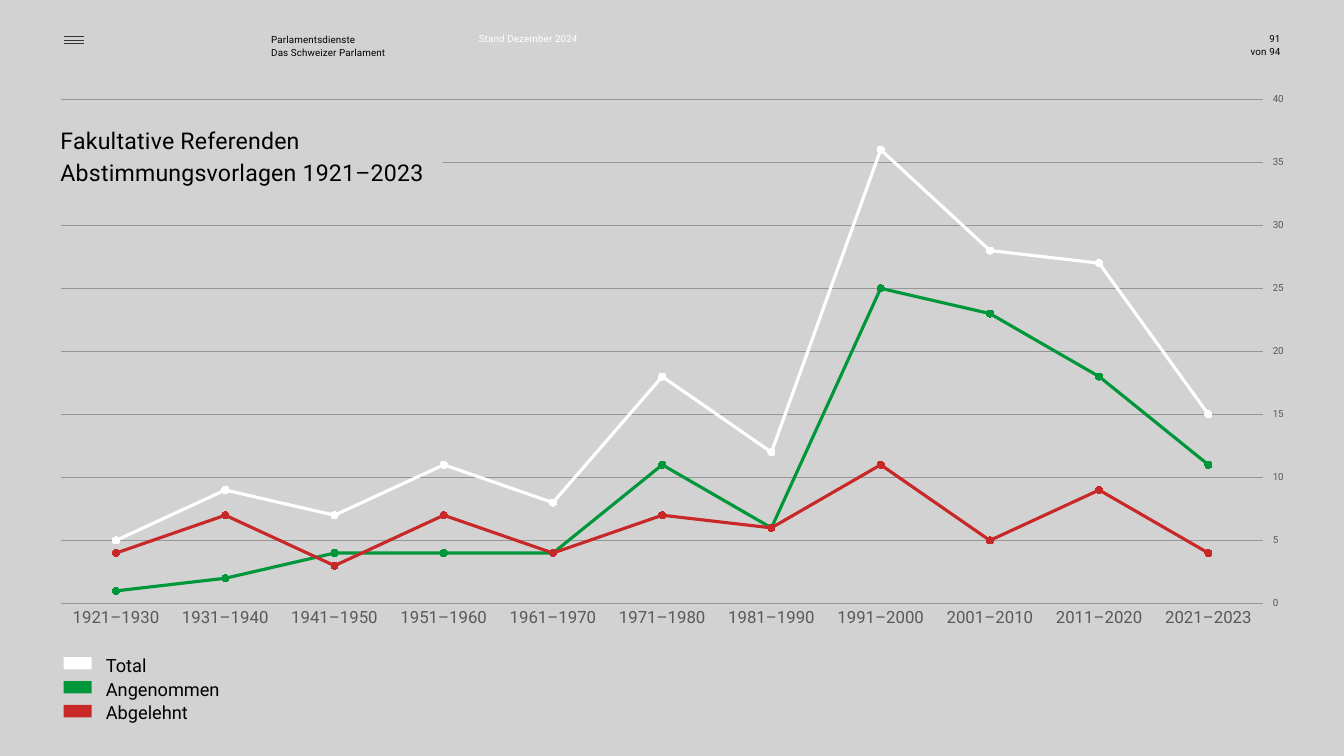
from dataclasses import dataclass

from pptx import Presentation
from pptx import util as u
from pptx.chart import data as chart_data
from pptx.dml.color import RGBColor
from pptx.enum import chart as ch, shapes, text
from pptx.oxml import parse_xml
from pptx.oxml.ns import nsdecls, qn

GROUND = RGBColor(0xD2, 0xD2, 0xD2)
BLACK = RGBColor(0, 0, 0)
WHITE = RGBColor(0xFF, 0xFF, 0xFF)
GREEN = RGBColor(0x00, 0x97, 0x3A)
RED = RGBColor(0xC8, 0x28, 0x28)
LABEL_GREY = RGBColor(0x59, 0x59, 0x59)
GRID_GREY = RGBColor(0x96, 0x96, 0x96)
MENU_GREY = RGBColor(0x34, 0x34, 0x34)
FONT = "Roboto"
WIDTH, HEIGHT = u.Inches(13.33), u.Inches(7.5)
LEFT_EDGE = 4.73


@dataclass(frozen=True)
class Area:
    """Percentages of the slide's width and height."""

    left: float
    top: float
    width: float
    height: float

    def box(self) -> tuple[int, int, int, int]:
        return (across(self.left), down(self.top),
                across(self.width), down(self.height))


@dataclass(frozen=True)
class Caption:
    area: Area
    lines: tuple[str, ...]
    size: float = 7
    color: RGBColor = BLACK
    spacing: float | u.Pt = 1.0
    tracking: int = 10
    align: text.PP_ALIGN = text.PP_ALIGN.LEFT


@dataclass(frozen=True)
class Outcome:
    name: str
    color: RGBColor
    votes: tuple[int, ...]


TOTAL = Outcome("Total", WHITE, (5, 9, 7, 11, 8, 18, 12, 36, 28, 27, 15))
ACCEPTED = Outcome("Angenommen", GREEN, (1, 2, 4, 4, 4, 11, 6, 25, 23, 18, 11))
REJECTED = Outcome("Abgelehnt", RED, (4, 7, 3, 7, 4, 7, 6, 11, 5, 9, 4))
LEGEND = (TOTAL, ACCEPTED, REJECTED)
PLOTTED = (ACCEPTED, REJECTED, TOTAL)
DECADES = [f"{start}–{min(start + 9, 2023)}" for start in range(1921, 2022, 10)]

CAPTIONS = (
    Caption(Area(91.97, 6, 3.3, 1.6), ("von 94",), align=text.PP_ALIGN.RIGHT),
    Caption(Area(20.18, 4.27, 9.75, 3.47),
            ("Parlamentsdienste", "Das Schweizer Parlament"), spacing=1.1),
    Caption(Area(4.5, 16.27, 41.94, 12.8),
            ("Fakultative Referenden", "Abstimmungsvorlagen 1921–2023"),
            size=16.5, spacing=1.14, tracking=20),
    Caption(Area(7.88, 86.27, 9, 9.6), tuple(o.name for o in LEGEND),
            size=13, spacing=u.Pt(17), tracking=0),
    Caption(Area(35.63, 4.27, 9.08, 1.6), ("Stand Dezember 2024",), color=WHITE),
    Caption(Area(91.97, 4.27, 3.3, 1.6), ("91",), align=text.PP_ALIGN.RIGHT),
)


def across(percent: float) -> int:
    return round(WIDTH * percent / 100)


def down(percent: float) -> int:
    return round(HEIGHT * percent / 100)


def style_font(font, size: float, color: RGBColor) -> None:
    font.name = FONT
    font.size = u.Pt(size)
    font.color.rgb = color


def draw_caption(slide, caption: Caption) -> None:
    frame = slide.shapes.add_textbox(*caption.area.box()).text_frame
    frame.word_wrap = True
    frame.margin_left = frame.margin_right = 0
    frame.margin_top = frame.margin_bottom = 0
    frame.text = "\n".join(caption.lines)
    for paragraph in frame.paragraphs:
        paragraph.alignment = caption.align
        paragraph.line_spacing = caption.spacing
        style_font(paragraph.font, caption.size, caption.color)
        defaults = paragraph._p.pPr.find(qn("a:defRPr"))
        defaults.set("spc", str(caption.tracking))


def draw_block(slide, area: Area, color: RGBColor) -> None:
    block = slide.shapes.add_shape(shapes.MSO_SHAPE.RECTANGLE, *area.box())
    block.shadow.inherit = False
    block.fill.solid()
    block.fill.fore_color.rgb = color
    block.line.fill.background()


def draw_menu_icon(slide) -> None:
    for row in range(3):
        level = down(4.8 + 0.47 * row)
        bar = slide.shapes.add_connector(
            shapes.MSO_CONNECTOR.STRAIGHT,
            across(LEFT_EDGE), level, across(LEFT_EDGE + 1.5), level)
        bar.line.color.rgb = MENU_GREY
        bar.line.width = u.Pt(0.4)
        bar._element.spPr.append(parse_xml(f"<a:effectLst {nsdecls('a')}/>"))


def place_plot(chart, x: float, y: float, w: float, h: float) -> None:
    plot_area = chart._chartSpace.chart.plotArea
    for layout in plot_area.findall(qn("c:layout")):
        plot_area.remove(layout)
    plot_area.insert(0, parse_xml(
        f'<c:layout {nsdecls("c")}><c:manualLayout><c:layoutTarget val="inner"/>'
        f'<c:xMode val="edge"/><c:yMode val="edge"/><c:x val="{x}"/>'
        f'<c:y val="{y}"/><c:w val="{w}"/><c:h val="{h}"/>'
        f'</c:manualLayout></c:layout>'))


def draw_chart(slide, area: Area) -> None:
    votes = chart_data.CategoryChartData()
    votes.categories = DECADES
    for outcome in PLOTTED:
        votes.add_series(outcome.name, outcome.votes)
    chart = slide.shapes.add_chart(
        ch.XL_CHART_TYPE.LINE_MARKERS, *area.box(), votes).chart
    chart.has_legend = False
    chart.has_title = False
    style_font(chart.font, 10, BLACK)
    place_plot(chart, 0.008, 0.028, 0.969, 0.903)

    decades, counts = chart.category_axis, chart.value_axis
    for axis, size in ((decades, 12), (counts, 7)):
        axis.major_tick_mark = axis.minor_tick_mark = ch.XL_TICK_MARK.NONE
        style_font(axis.tick_labels.font, size, LABEL_GREY)
    decades.has_major_gridlines = False
    counts.has_major_gridlines = True
    for line in (decades.format.line, counts.major_gridlines.format.line):
        line.color.rgb = GRID_GREY
        line.width = u.Pt(0.75)
    counts.format.line.fill.background()
    counts.minimum_scale, counts.maximum_scale, counts.major_unit = 0, 40, 5
    counts.tick_label_position = ch.XL_TICK_LABEL_POSITION.HIGH

    plot = chart.plots[0]
    plot.vary_by_categories = False
    for series, outcome in zip(plot.series, PLOTTED):
        series.smooth = False
        series.format.line.color.rgb = outcome.color
        series.format.line.width = u.Pt(2.25)
        series.marker.style = ch.XL_MARKER_STYLE.CIRCLE
        series.marker.size = 5
        series.marker.format.fill.solid()
        series.marker.format.fill.fore_color.rgb = outcome.color
        series.marker.format.line.color.rgb = outcome.color


def main() -> None:
    deck = Presentation()
    deck.slide_width, deck.slide_height = WIDTH, HEIGHT
    slide = deck.slides.add_slide(deck.slide_layouts[6])
    slide.background.fill.solid()
    slide.background.fill.fore_color.rgb = GROUND

    draw_menu_icon(slide)
    draw_chart(slide, Area(3.83, 11.07, 92.27, 73.87))
    for row, outcome in enumerate(LEGEND):
        draw_block(slide, Area(LEFT_EDGE, 86.93 + 3.16 * row, 2.1, 1.63), outcome.color)
    draw_block(slide, Area(2.93, 14.93, 30, 10.93), GROUND)
    for caption in CAPTIONS:
        draw_caption(slide, caption)
    deck.save("out.pptx")


if __name__ == "__main__":
    main()
